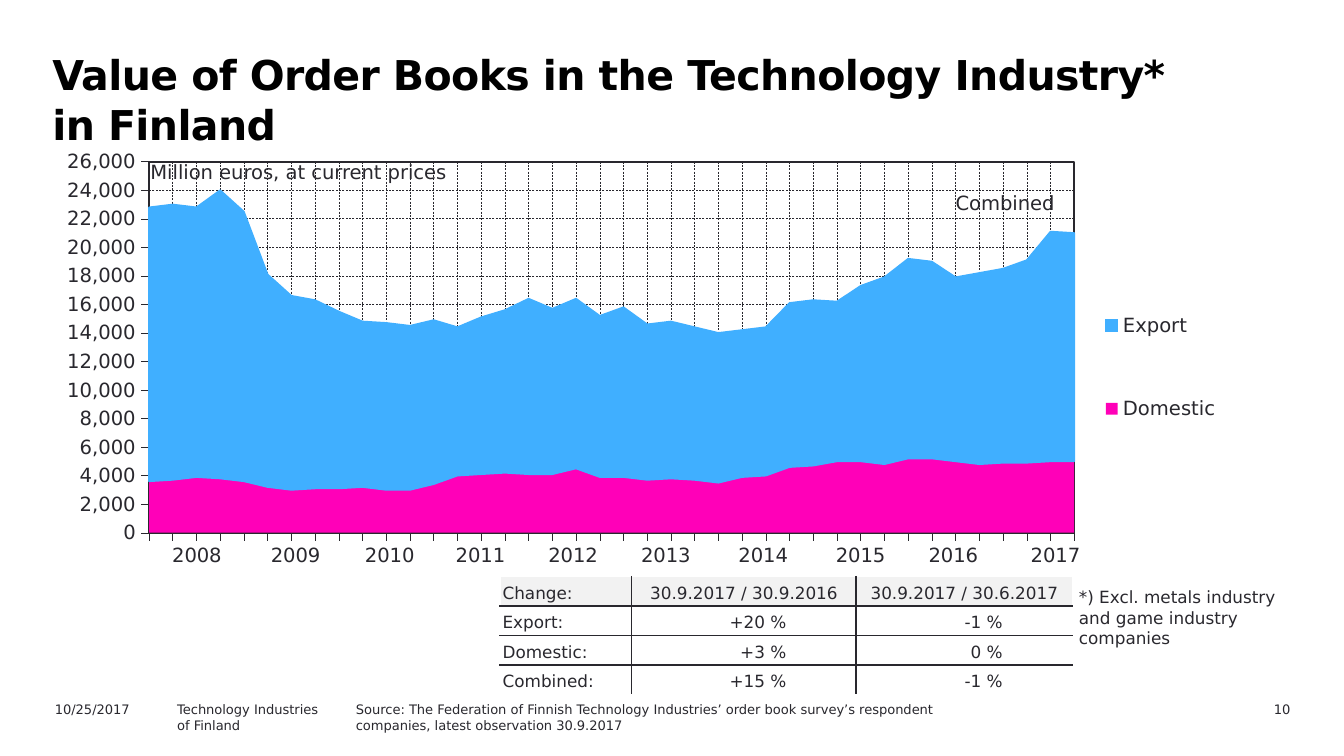
import pptx
import pptx.chart.data
import pptx.dml.color
import pptx.enum.chart
import pptx.enum.dml
import pptx.enum.text
import pptx.oxml
import pptx.oxml.ns
import pptx.util

Inches = pptx.util.Inches
Pt = pptx.util.Pt
RGBColor = pptx.dml.color.RGBColor
Align = pptx.enum.text.PP_ALIGN
qn = pptx.oxml.ns.qn

INK = RGBColor(0x29, 0x28, 0x2E)
BLACK = RGBColor(0, 0, 0)
WHITE = RGBColor(0xFF, 0xFF, 0xFF)
HEADER_GREY = RGBColor(0xF2, 0xF2, 0xF2)
DOMESTIC_PINK = RGBColor(0xFF, 0x00, 0xB8)
EXPORT_BLUE = RGBColor(0x40, 0xAF, 0xFF)

PLAIN_TABLE_STYLE = "{2D5ABB26-0587-4C30-8999-92F81FD0307C}"

DOMESTIC = [3600, 3700, 3900, 3800, 3600, 3200, 3000, 3100, 3100, 3200,
            3000, 3000, 3400, 4000, 4100, 4200, 4100, 4100, 4500, 3900,
            3900, 3700, 3800, 3700, 3500, 3900, 4000, 4600, 4700, 5000,
            5000, 4800, 5200, 5200, 5000, 4800, 4900, 4900, 5000, 5000]
EXPORT = [19200, 19300, 18900, 20200, 18900, 14900, 13600, 13200, 12400, 11600,
          11700, 11500, 11500, 10400, 11000, 11400, 12300, 11600, 11900, 11300,
          11900, 10900, 11000, 10700, 10500, 10300, 10400, 11500, 11600, 11200,
          12300, 13100, 14000, 13800, 12900, 13400, 13600, 14200, 16100, 16000]
LABELLED_QUARTERS = 38
YEAR_WIDTHS = [0.73, 0.74, 0.66, 0.69, 0.69, 0.69, 0.76, 0.69, 0.69, 0.83]
CHANGES = [("Change:", "30.9.2017 / 30.9.2016", "30.9.2017 / 30.6.2017"),
           ("Export:", "+20 %", "-1 %"),
           ("Domestic:", "+3 %", "0 %"),
           ("Combined:", "+15 %", "-1 %")]


def chart_xml(body):
    return pptx.oxml.parse_xml(body.replace(
        ">", " " + pptx.oxml.ns.nsdecls("c", "a") + ">", 1))


def manual_layout(x, y, w, h, inner=False):
    target = '<c:layoutTarget val="inner"/>' if inner else ""
    return chart_xml(
        f'<c:layout><c:manualLayout>{target}'
        '<c:xMode val="edge"/><c:yMode val="edge"/>'
        f'<c:x val="{x}"/><c:y val="{y}"/><c:w val="{w}"/><c:h val="{h}"/>'
        '</c:manualLayout></c:layout>')


def drop_layout(element):
    for layout in element.findall(qn("c:layout")):
        element.remove(layout)


class SlideBuilder:
    font_name = "DejaVu Sans"

    def __init__(self, slide):
        self.slide = slide

    def style(self, font, size, color=INK, bold=False):
        font.name, font.size, font.bold = self.font_name, Pt(size), bold
        font.color.rgb = color

    def text(self, box, content, size, color=INK, bold=False, align=Align.LEFT,
             inset=0.1, wrap=True, spacing=None, tracking=None):
        frame = self.slide.shapes.add_textbox(*map(Inches, box)).text_frame
        frame.word_wrap = wrap
        frame.margin_left = Inches(inset)
        frame.text = content
        for paragraph in frame.paragraphs:
            paragraph.alignment = align
            if spacing:
                paragraph.line_spacing = Pt(spacing)
            for run in paragraph.runs:
                self.style(run.font, size, color, bold)
                if tracking:
                    run.font._element.set("spc", str(tracking))

    def table(self, box, widths, row_height, row_count):
        table = self.slide.shapes.add_table(
            row_count, len(widths), *map(Inches, box)).table
        table.first_row = table.horz_banding = False
        table._tbl.tblPr.find(qn("a:tableStyleId")).text = PLAIN_TABLE_STYLE
        for column, width in zip(table.columns, widths):
            column.width = Inches(width)
        for row in table.rows:
            row.height = Inches(row_height)
        return table

    def cell(self, cell, content, size, align, fill=None):
        cell.text = content
        paragraph = cell.text_frame.paragraphs[0]
        paragraph.alignment = align
        self.style(paragraph.runs[0].font, size)
        if fill is None:
            cell.fill.background()
        else:
            cell.fill.solid()
            cell.fill.fore_color.rgb = fill

    def borders(self, cell, colors):
        properties = cell._tc.get_or_add_tcPr()
        for side, color in zip("LRTB", colors):
            properties.append(pptx.oxml.parse_xml(
                f'<a:ln{side} {pptx.oxml.ns.nsdecls("a")} w="12700">'
                f'<a:solidFill><a:srgbClr val="{color}"/></a:solidFill></a:ln{side}>'))

    def axis(self, axis):
        axis.major_tick_mark = pptx.enum.chart.XL_TICK_MARK.OUTSIDE
        axis.minor_tick_mark = pptx.enum.chart.XL_TICK_MARK.NONE
        axis.has_major_gridlines = True
        self.style(axis.tick_labels.font, 10.5)
        axis.format.line.color.rgb = INK
        axis.format.line.width = Pt(0.22)
        grid = axis.major_gridlines.format.line
        grid.color.rgb = INK
        grid.width = Pt(0.25)
        grid.dash_style = pptx.enum.dml.MSO_LINE.DASH

    def area_chart(self, box, categories, series, plot, legend_area):
        data = pptx.chart.data.CategoryChartData(number_format="#,##0")
        data.categories = categories
        for name, values, _ in series:
            data.add_series(name, values)
        chart = self.slide.shapes.add_chart(
            pptx.enum.chart.XL_CHART_TYPE.AREA_STACKED,
            *map(Inches, box), data).chart
        chart.has_title = False
        self.style(chart.font, 10.5)
        chart.plots[0].vary_by_categories = False
        for drawn, (_, _, color) in zip(chart.plots[0].series, series):
            drawn.format.fill.solid()
            drawn.format.fill.fore_color.rgb = color

        # Axes
        self.axis(chart.category_axis)
        chart.category_axis.tick_label_position = pptx.enum.chart.XL_TICK_LABEL_POSITION.NONE
        values = chart.value_axis
        self.axis(values)
        values.minimum_scale, values.maximum_scale, values.major_unit = 0, 26000, 2000
        values.tick_labels.number_format = "#,##0"
        values.tick_labels.number_format_is_linked = False

        # Plot area with a frame
        area = chart._chartSpace.chart.plotArea
        drop_layout(area)
        area.insert(0, manual_layout(*plot, inner=True))
        area.append(chart_xml(
            '<c:spPr><a:noFill/><a:ln w="12700"><a:solidFill>'
            f'<a:srgbClr val="{INK}"/></a:solidFill></a:ln></c:spPr>'))

        # Legend
        chart.has_legend = True
        legend = chart.legend
        legend.position = pptx.enum.chart.XL_LEGEND_POSITION.RIGHT
        legend.include_in_layout = False
        self.style(legend.font, 10.5)
        drop_layout(legend._element)
        legend._element.find(qn("c:legendPos")).addnext(manual_layout(*legend_area))
        return chart


def main():
    deck = pptx.Presentation()
    deck.slide_width = Inches(10)
    deck.slide_height = deck.slide_width * 9 // 16
    page = SlideBuilder(deck.slides.add_slide(deck.slide_layouts[6]))

    # Title
    page.text((0.28, 0.31, 8.74, 0.71),
              "Value of Order Books in the Technology Industry* in Finland",
              22, BLACK, bold=True, inset=0.11, spacing=27, tracking=-30)

    # Order book chart
    quarters = [str(number) for number in range(1, LABELLED_QUARTERS + 1)]
    order_books = page.area_chart(
        (0.42, 1.11, 9.18, 3.12), quarters,
        [("Domestic", DOMESTIC, DOMESTIC_PINK), ("Export", EXPORT, EXPORT_BLUE)],
        plot=(0.075, 0.03, 0.75, 0.885), legend_area=(0.825, 0.25, 0.14, 0.54))
    export_line = order_books.plots[0].series[1].format.line
    export_line.color.rgb = EXPORT_BLUE
    export_line.width = Pt(0.88)

    # Years below the chart
    years = page.table((1.1, 4, 7.16, 0.28), YEAR_WIDTHS, 0.25, 1)
    for offset, year in enumerate(years.rows[0].cells):
        page.cell(year, str(2008 + offset), 10.5, Align.CENTER)

    # Chart captions
    page.text((1.03, 1.14, 2.44, 0.27), "Million euros, at current prices",
              10.5, inset=0.09, wrap=False)
    page.text((7.02, 1.37, 1.06, 0.27), "Combined", 10.5, inset=0.09)

    # Change table: white outside, dark lines inside
    changes = page.table((3.72, 4.29, 4.27, 0.88), [0.98, 1.67, 1.61], 0.22, 4)
    row_fills = [HEADER_GREY, None, None, WHITE]
    for r, row in enumerate(CHANGES):
        for c, content in enumerate(row):
            cell = changes.cell(r, c)
            is_outer = (c == 0, c == 2, r == 0, r == 3)
            page.borders(cell, [WHITE if outer else INK for outer in is_outer])
            is_figure = r > 0 and c > 0
            align = Align.RIGHT if is_figure else Align.CENTER if c else Align.LEFT
            page.cell(cell, content, 9, align, row_fills[r])
            cell.vertical_anchor = pptx.enum.text.MSO_ANCHOR.BOTTOM
            cell.margin_left = cell.margin_top = cell.margin_bottom = Inches(0.02)
            cell.margin_right = Inches(0.52 if is_figure else 0.02)

    # Footnote
    page.text((7.93, 4.32, 1.66, 0.56),
              "*) Excl. metals industry and game industry companies", 9)

    # Footer
    page.text((0.31, 5.17, 1, 0.18), "10/25/2017", 7)
    page.text((1.22, 5.17, 1.8, 0.18), "Technology Industries\nof Finland", 7)
    page.text((2.55, 5.17, 5, 0.26),
              "Source: The Federation of Finnish Technology Industries’ order book "
              "survey’s respondent companies, latest observation 30.9.2017", 7)
    page.text((8.76, 5.17, 0.94, 0.18), "10", 7, align=Align.RIGHT)

    deck.save("out.pptx")


if __name__ == "__main__":
    main()
